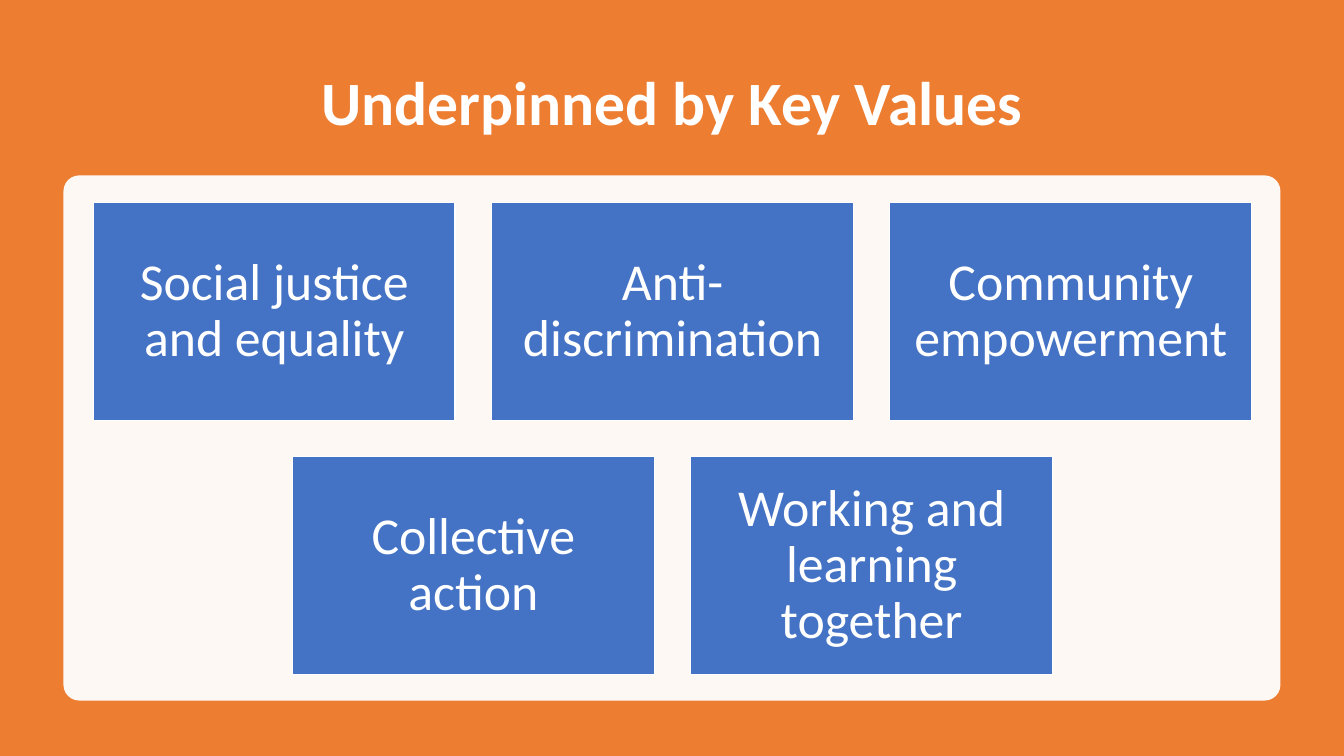
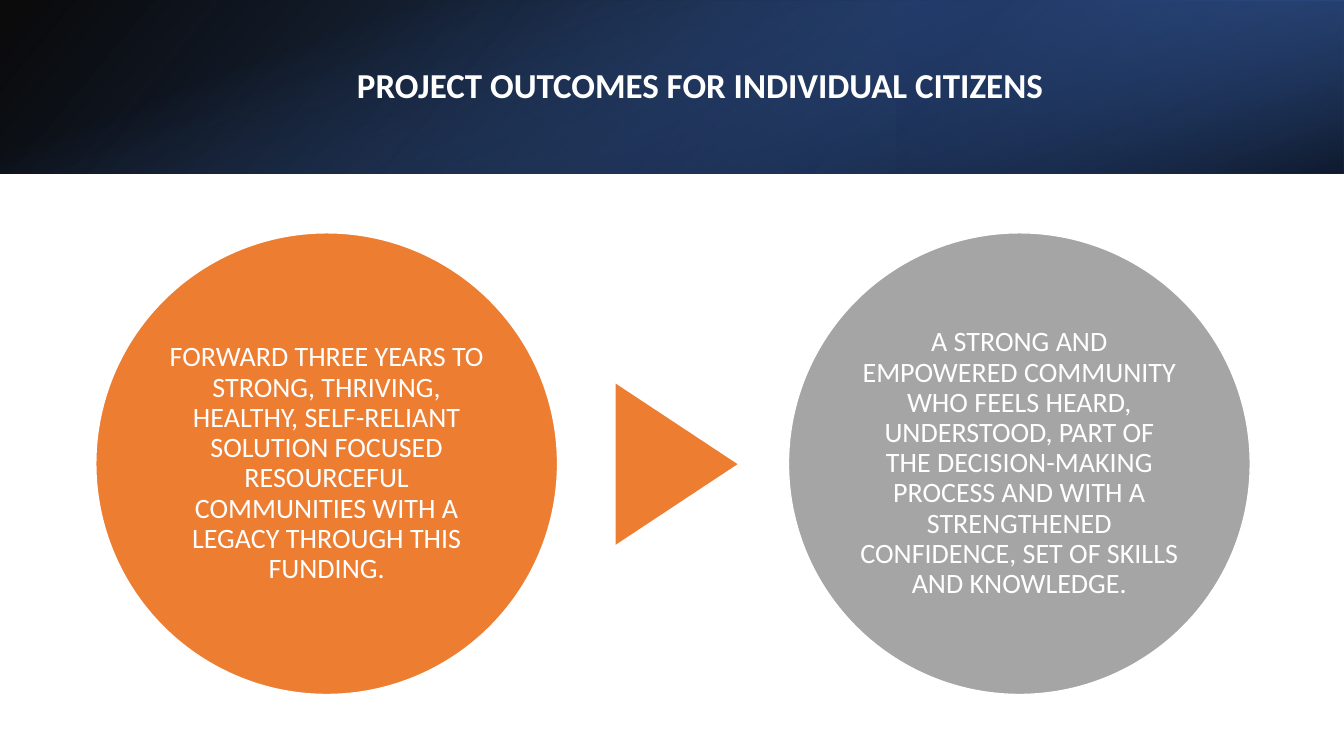
from dataclasses import dataclass
from typing import Optional

from lxml import etree
from pptx import Presentation
from pptx.dml.color import RGBColor
from pptx.enum.shapes import MSO_SHAPE
from pptx.enum.text import MSO_ANCHOR, MSO_AUTO_SIZE, PP_ALIGN
from pptx.oxml.ns import qn
from pptx.util import Inches, Pt

RECT, ROUND = MSO_SHAPE.RECTANGLE, MSO_SHAPE.ROUNDED_RECTANGLE
OVAL, ARROW = MSO_SHAPE.OVAL, MSO_SHAPE.ISOSCELES_TRIANGLE
LEFT, MID = PP_ALIGN.LEFT, PP_ALIGN.CENTER

WHITE, BLACK = "FFFFFF", "000000"
ORANGE, BLUE, GREY = "ED7D31", "4472C4", "A5A5A5"
NAVY, DEEP = "2F5597", "203864"
FONT = "Calibri"
TITLE_ONLY = 5


@dataclass
class Box:
    x: float
    y: float
    w: float
    h: float

    def place(self) -> list:
        return [Inches(v) for v in (self.x, self.y, self.w, self.h)]


@dataclass
class Band:
    box: Box
    stops: list  # (percent, colour, opacity)
    angle: int
    turn: int = 0
    flip: bool = False


BANDS = [
    Band(Box(0, 0, 13.33, 1.72), [(0, BLACK, 96), (100, NAVY, 100)], 140, flip=True),
    Band(Box(8.89, 0, 4.44, 1.72), [(19, DEEP, 68), (100, BLUE, 79)], 320, 180, True),
    Band(Box(5.8, -5.8, 1.72, 13.33), [(23, BLUE, 0), (99, BLACK, 74)], 340, 90),
]

VALUES = [
    ["Social justice and equality", "Anti-discrimination", "Community empowerment"],
    ["Collective action", "Working and learning together"],
]

GOALS = [
    (0.95, ORANGE, "FORWARD THREE YEARS TO STRONG, THRIVING, HEALTHY, SELF-RELIANT "
     "SOLUTION FOCUSED RESOURCEFUL COMMUNITIES WITH A LEGACY THROUGH THIS FUNDING."),
    (7.82, GREY, "A STRONG AND EMPOWERED COMMUNITY WHO FEELS HEARD, UNDERSTOOD, PART OF "
     "THE DECISION-MAKING PROCESS AND WITH A STRENGTHENED CONFIDENCE, SET OF SKILLS "
     "AND KNOWLEDGE."),
]


def rgb(code: str) -> RGBColor:
    return RGBColor.from_string(code)


def fade(color, opacity: float) -> None:
    """Give a colour element an opacity in percent."""
    etree.SubElement(color, qn("a:alpha"), val=str(int(opacity * 1000)))


def write(shape, text: str, size: float, inset: float, bold: bool = False, align=MID) -> None:
    frame = shape.text_frame
    pad = Inches(inset)
    look = {"word_wrap": True, "auto_size": MSO_AUTO_SIZE.NONE,
            "vertical_anchor": MSO_ANCHOR.MIDDLE, "margin_left": pad,
            "margin_right": pad, "margin_top": pad, "margin_bottom": pad}
    frame.text = text
    para = frame.paragraphs[0]
    font = para.runs[0].font
    font.color.rgb = rgb(WHITE)
    for part, style in (
        (frame, look),
        (para, {"alignment": align, "line_spacing": 0.9}),
        (font, {"name": FONT, "size": Pt(size), "bold": bold}),
    ):
        for key, val in style.items():
            setattr(part, key, val)


def draw(slide, kind, box: Box, fill: Optional[str] = None, edge: Optional[str] = None):
    shape = slide.shapes.add_shape(kind, *box.place())
    shape.shadow.inherit = False
    if fill:
        shape.fill.solid()
        shape.fill.fore_color.rgb = rgb(fill)
    if edge:
        shape.line.color.rgb = rgb(edge)
        shape.line.width = Pt(1)
    else:
        shape.line.fill.background()
    return shape


def blend(slide, band: Band) -> None:
    """Draw a band with a gradient that may be partly clear."""
    shape = draw(slide, RECT, band.box)
    shape.rotation = band.turn
    props = shape.element.spPr
    if band.flip:
        props.find(qn("a:xfrm")).set("flipH", "1")
    grad = etree.Element(qn("a:gradFill"), rotWithShape="1")
    stops = etree.SubElement(grad, qn("a:gsLst"))
    for pos, code, opacity in band.stops:
        stop = etree.SubElement(stops, qn("a:gs"), pos=str(pos * 1000))
        fade(etree.SubElement(stop, qn("a:srgbClr"), val=code), opacity)
    etree.SubElement(grad, qn("a:lin"), ang=str(band.angle * 60000), scaled="0")
    props.find(qn("a:prstGeom")).addnext(grad)


def head(slide, text: str, box: Box, size: float, align=MID) -> None:
    """Fill the title and bring it to the front."""
    title = slide.shapes.title
    title.left, title.top, title.width, title.height = box.place()
    write(title, text, size, 0, True, align)
    title.element.getparent().append(title.element)


def values(slide) -> None:
    slide.background.fill.solid()
    slide.background.fill.fore_color.rgb = rgb(ORANGE)
    panel = draw(slide, ROUND, Box(0.63, 1.74, 12.07, 5.21), WHITE)
    panel.adjustments[0] = 0.03
    fade(panel.element.spPr.find(qn("a:solidFill"))[0], 95)

    # Centred rows of cards
    wide, high, gap, centre = 3.59, 2.16, 0.36, 6.67
    for row, names in enumerate(VALUES):
        start = centre - (len(names) * (wide + gap) - gap) / 2
        for col, name in enumerate(names):
            box = Box(start + col * (wide + gap), 2.01 + row * (high + gap), wide, high)
            write(draw(slide, RECT, box, BLUE, WHITE), name, 37, 0.15)
    head(slide, "Underpinned by Key Values", Box(0.92, 0.5, 11.5, 1.1), 44)


def goals(slide) -> None:
    for band in BANDS:
        blend(slide, band)

    # Two circles joined by a pointer
    for x, fill, text in GOALS:
        write(draw(slide, OVAL, Box(x, 2.31, 4.58, 4.58), fill, WHITE), text, 20, 0.03)
    draw(slide, ARROW, Box(5.91, 4, 1.6, 1.21), ORANGE).rotation = 90
    head(slide, "PROJECT OUTCOMES FOR INDIVIDUAL CITIZENS",
         Box(3.54, 0.38, 7.5, 0.96), 25, LEFT)


def main() -> None:
    deck = Presentation()
    deck.slide_width, deck.slide_height = Inches(13.33), Inches(7.5)
    for build in (values, goals):
        build(deck.slides.add_slide(deck.slide_layouts[TITLE_ONLY]))
    deck.save("out.pptx")


if __name__ == "__main__":
    main()
